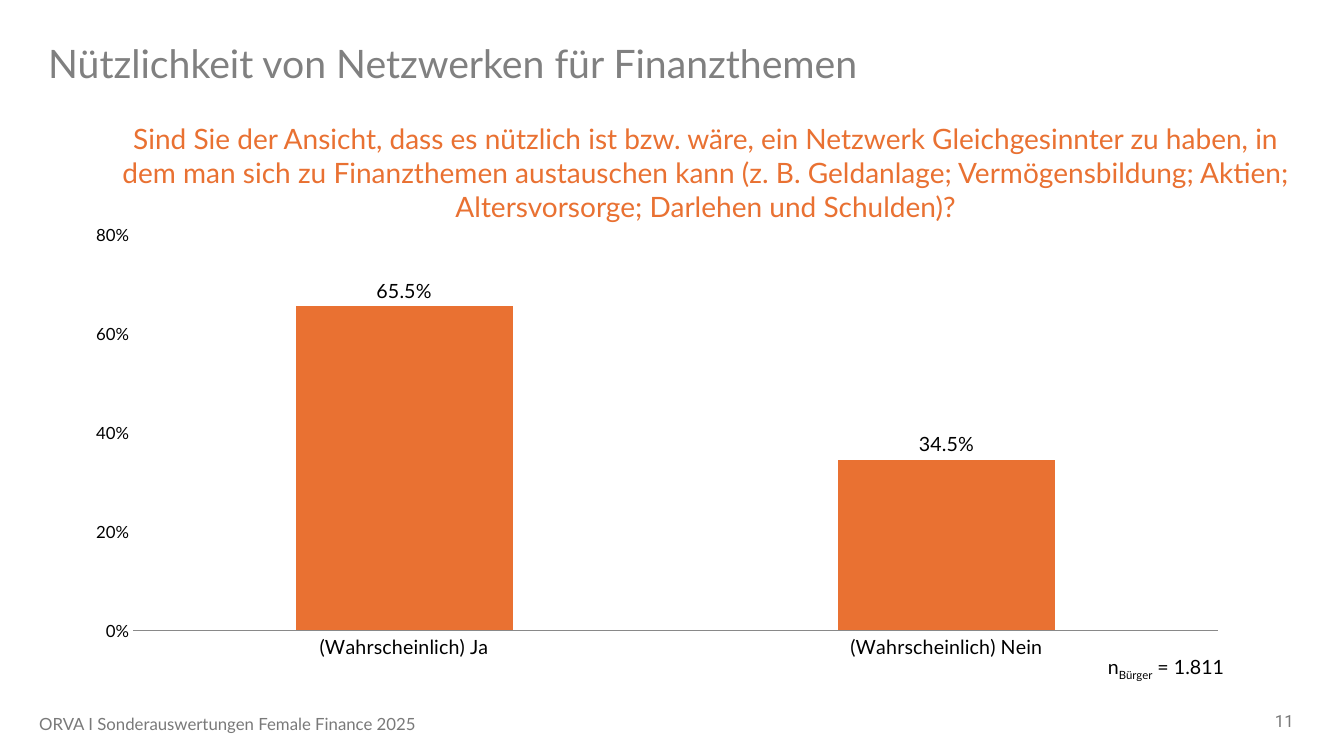
from dataclasses import dataclass

from lxml import etree
from pptx import Presentation
from pptx import util as u
from pptx.chart.data import CategoryChartData
from pptx.dml.color import RGBColor
from pptx.enum import chart as ch
from pptx.enum import text
from pptx.oxml import ns

ORANGE, BLACK, FOOTER_GRAY = "E97132", "000000", "797979"
LEFT, CENTER, RIGHT = text.PP_ALIGN.LEFT, text.PP_ALIGN.CENTER, text.PP_ALIGN.RIGHT
TOP, MIDDLE = text.MSO_ANCHOR.TOP, text.MSO_ANCHOR.MIDDLE


@dataclass
class Label:
    """A text block; spans are (wording, baseline shift in percent)."""
    spans: list[tuple[str, int]]
    area: tuple[float, float, float, float]
    size: float
    color: str
    font: str = "Lato"
    align: text.PP_ALIGN = LEFT
    anchor: text.MSO_ANCHOR = TOP
    line_spacing: float = 1.0


LABELS = [
    Label([("Nützlichkeit von Netzwerken für Finanzthemen", 0)],
          (0.38, 0.3, 12.63, 0.59), 28, "808080", anchor=MIDDLE, line_spacing=1.14),
    Label([("Sind Sie der Ansicht, dass es nützlich ist bzw. wäre, ein Netzwerk "
            "Gleichgesinnter zu haben, in dem man sich zu Finanzthemen austauschen kann "
            "(z. B. Geldanlage; Vermögensbildung; Aktien; Altersvorsorge; Darlehen und "
            "Schulden)?", 0)],
          (1.05, 1.16, 11.9, 1.11), 20, ORANGE, align=CENTER),
    Label([("n", 0), ("Bürger", -25), (" = 1.811", 0)],
          (10.37, 6.45, 1.87, 0.34), 14, BLACK, align=RIGHT),
    Label([("11", 0)], (9.93, 6.95, 3, 0.4), 12, FOOTER_GRAY,
          font="Roboto", align=RIGHT, anchor=MIDDLE),
    Label([("ORVA I Sonderauswertungen Female Finance 2025", 0)],
          (0.29, 6.98, 6.7, 0.4), 12, FOOTER_GRAY, anchor=MIDDLE),
]


def rgb(value: str) -> RGBColor:
    return RGBColor.from_string(value)


def style_font(font, *, size: float, color: str = BLACK, name: str = "Lato") -> None:
    font.size = u.Pt(size)
    font.name = name
    font.color.rgb = rgb(color)


def add_span(para, wording: str, *, size: float, color: str, name: str,
             baseline: int = 0) -> None:
    span = para.add_run()
    span.text = wording
    style_font(span.font, size=size, color=color, name=name)
    if baseline:
        span._r.get_or_add_rPr().set("baseline", str(baseline * 1000))


def add_label(page, label: Label) -> None:
    box = page.shapes.add_textbox(*map(u.Inches, label.area))
    frame = box.text_frame
    frame.word_wrap = True
    frame.vertical_anchor = label.anchor
    para = frame.paragraphs[0]
    para.alignment = label.align
    para.line_spacing = label.line_spacing
    for wording, baseline in label.spans:
        add_span(para, wording, size=label.size, color=label.color,
                 name=label.font, baseline=baseline)


def set_inner_plot(chart, **fractions: float) -> None:
    """Fix the plot area as fractions of the chart frame."""
    plot_area = chart._chartSpace.chart.plotArea
    for old in plot_area.findall(ns.qn("c:layout")):
        plot_area.remove(old)
    layout = etree.Element(ns.qn("c:layout"))
    manual = etree.SubElement(layout, ns.qn("c:manualLayout"))
    settings = {"layoutTarget": "inner", "xMode": "edge", "yMode": "edge", **fractions}
    for tag, value in settings.items():
        etree.SubElement(manual, ns.qn(f"c:{tag}")).set("val", str(value))
    plot_area.insert(0, layout)


def add_answer_chart(page) -> None:
    data = CategoryChartData(number_format="0.0%")
    data.categories = ["(Wahrscheinlich) Ja", "(Wahrscheinlich) Nein"]
    data.add_series("Series 1", [0.655, 0.345])
    chart = page.shapes.add_chart(
        ch.XL_CHART_TYPE.COLUMN_CLUSTERED,
        *map(u.Inches, (0.57, 2.07, 11.9, 4.85)), data).chart
    chart.has_title = False
    chart.has_legend = False
    style_font(chart.font, size=14)
    set_inner_plot(chart, x=0.063, y=0.053, w=0.904, h=0.81)

    # Columns and their values
    plot = chart.plots[0]
    plot.gap_width, plot.overlap = 150, -20
    plot.vary_by_categories = False
    columns = plot.series[0]
    columns.format.fill.solid()
    columns.format.fill.fore_color.rgb = rgb(ORANGE)
    labels = columns.data_labels
    labels.show_value = True
    labels.position = ch.XL_LABEL_POSITION.OUTSIDE_END
    labels.number_format, labels.number_format_is_linked = "0.0%", False
    style_font(labels.font, size=14)

    # Axes
    for axis, size in ((chart.category_axis, 14), (chart.value_axis, 12)):
        axis.has_major_gridlines = False
        axis.major_tick_mark = axis.minor_tick_mark = ch.XL_TICK_MARK.NONE
        style_font(axis.tick_labels.font, size=size)
    chart.category_axis.format.line.color.rgb = rgb("898989")
    chart.category_axis.format.line.width = u.Pt(0.75)
    percent = chart.value_axis
    percent.minimum_scale, percent.maximum_scale, percent.major_unit = 0, 0.8, 0.2
    percent.tick_labels.number_format = "0%"
    percent.tick_labels.number_format_is_linked = False
    percent.format.line.fill.background()


def main() -> None:
    deck = Presentation()
    deck.slide_width, deck.slide_height = u.Inches(13.33), u.Inches(7.5)
    page = deck.slides.add_slide(deck.slide_layouts[6])
    add_answer_chart(page)
    for label in LABELS:
        add_label(page, label)
    deck.save("out.pptx")


if __name__ == "__main__":
    main()
